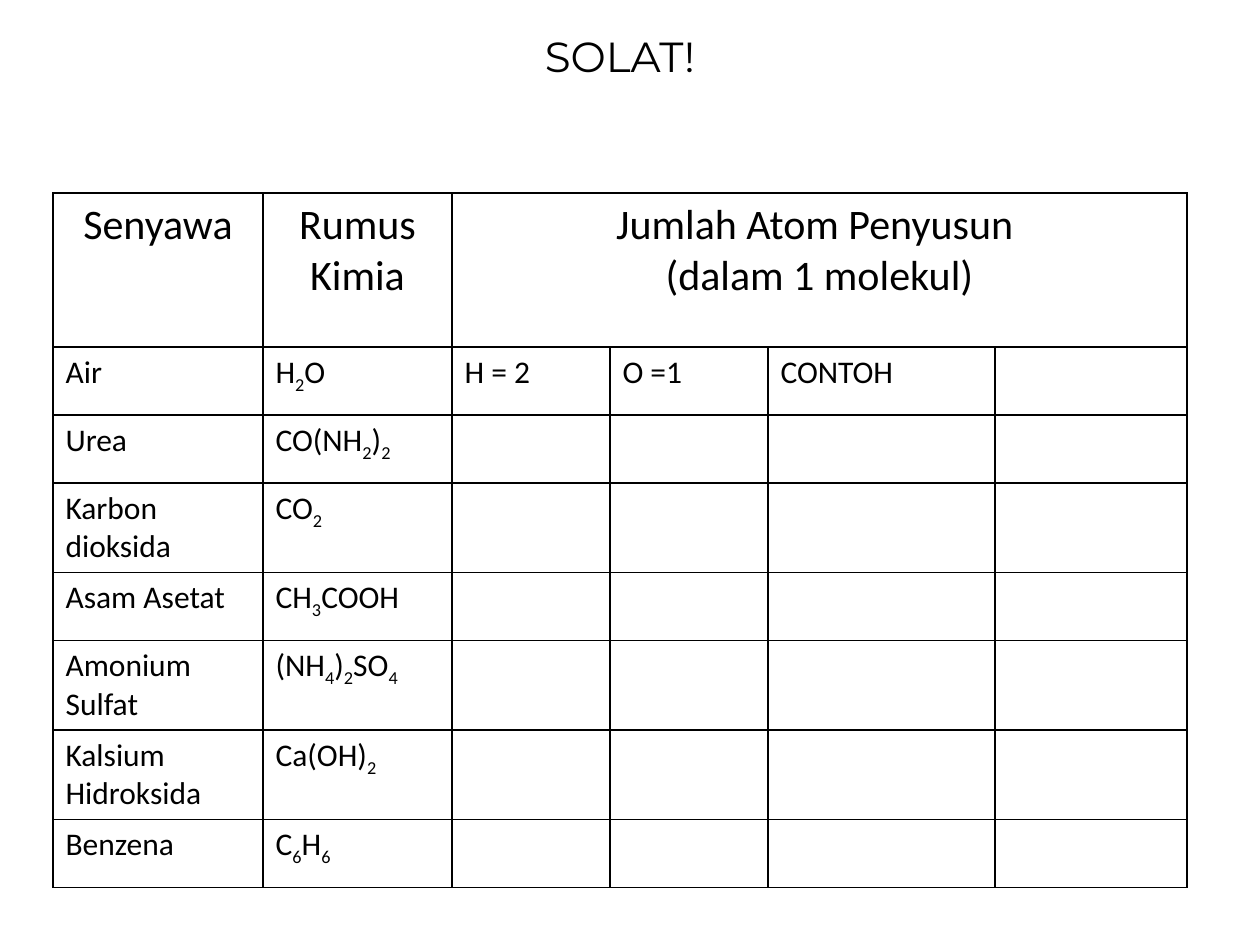
import itertools

import lxml.etree
import pptx
import pptx.dml.color
import pptx.enum.text
import pptx.oxml.ns
import pptx.util

PX_PER_INCH = 126
BLACK, WHITE = "000000", "FFFFFF"
COL_WIDTHS = [210, 189, 158, 158, 227, 192]
HEADER_HEIGHT, ROW_HEIGHT = 154, 68
HEADERS = ["Senyawa", "Rumus Kimia", "Jumlah Atom Penyusun \n(dalam 1 molekul)"]
COMPOUNDS = [
    ("Air", "H2O"),
    ("Urea", "CO(NH2)2"),
    ("Karbon dioksida", "CO2"),
    ("Asam Asetat", "CH3COOH"),
    ("Amonium Sulfat", "(NH4)2SO4"),
    ("Kalsium Hidroksida", "Ca(OH)2"),
    ("Benzena", "C6H6"),
]
EXAMPLE = ["H = 2", "O =1", "CONTOH"]
CENTER = pptx.enum.text.PP_ALIGN.CENTER
LEFT = pptx.enum.text.PP_ALIGN.LEFT


def px(n):
    return pptx.util.Emu(round(n * 914400 / PX_PER_INCH))


def rgb(color):
    return pptx.dml.color.RGBColor.from_string(color)


def add_run(p, text, size, font="Calibri", subscript=False):
    r = p.add_run()
    r.text = text
    r.font.name = font
    r.font.size = pptx.util.Pt(size)
    r.font.color.rgb = rgb(BLACK)
    if subscript:
        r.font._element.set("baseline", "-25000")


def add_lines(tf, text, size, align, font="Calibri"):
    for i, line in enumerate(text.split("\n")):
        p = tf.add_paragraph() if i else tf.paragraphs[0]
        p.alignment = align
        add_run(p, line, size, font)


def add_formula(p, formula, size):
    """Digits in a formula become subscripts."""
    for is_digit, chars in itertools.groupby(formula, str.isdigit):
        add_run(p, "".join(chars), size, subscript=is_digit)


def format_cell(cell):
    tcPr = cell._tc.get_or_add_tcPr()
    qn = pptx.oxml.ns.qn
    for side in ("a:lnL", "a:lnR", "a:lnT", "a:lnB"):
        ln = lxml.etree.SubElement(tcPr, qn(side), w=str(pptx.util.Pt(1)))
        fill = lxml.etree.SubElement(ln, qn("a:solidFill"))
        lxml.etree.SubElement(fill, qn("a:srgbClr"), val=BLACK)
    cell.fill.background()


def add_title(s, x, y, w, h):
    sp = s.shapes.title
    sp.left, sp.top, sp.width, sp.height = px(x), px(y), px(w), px(h)
    sp.fill.solid()
    sp.fill.fore_color.rgb = rgb(WHITE)
    tf = sp.text_frame
    tf.vertical_anchor = pptx.enum.text.MSO_ANCHOR.MIDDLE
    add_lines(tf, "SOLAT!", 24, CENTER, "Montserrat")


def add_compound_table(s, x, y):
    height = HEADER_HEIGHT + ROW_HEIGHT * len(COMPOUNDS)
    table = s.shapes.add_table(len(COMPOUNDS) + 1, len(COL_WIDTHS), px(x), px(y),
                               px(sum(COL_WIDTHS)), px(height)).table
    table.first_row = table.horz_banding = False
    for col, width in zip(table.columns, COL_WIDTHS):
        col.width = px(width)
    for i, row in enumerate(table.rows):
        row.height = px(ROW_HEIGHT if i else HEADER_HEIGHT)
    for cell in table.iter_cells():
        format_cell(cell)

    # Header row, its last heading spanning the atom columns
    table.cell(0, 2).merge(table.cell(0, len(COL_WIDTHS) - 1))
    for c, text in enumerate(HEADERS):
        add_lines(table.cell(0, c).text_frame, text, 24, CENTER)

    # Compounds and formulas
    for i, (name, formula) in enumerate(COMPOUNDS, 1):
        add_lines(table.cell(i, 0).text_frame, name, 18, LEFT)
        add_formula(table.cell(i, 1).text_frame.paragraphs[0], formula, 18)

    # Worked example in the first compound row
    for c, text in enumerate(EXAMPLE, 2):
        add_lines(table.cell(1, c).text_frame, text, 18, LEFT)


def main():
    prs = pptx.Presentation()
    prs.slide_width, prs.slide_height = px(1260), px(945)
    s = prs.slides.add_slide(prs.slide_layouts[5])
    add_title(s, 158, 24, 924, 63)
    add_compound_table(s, 53, 193)
    prs.save("out.pptx")


if __name__ == "__main__":
    main()
